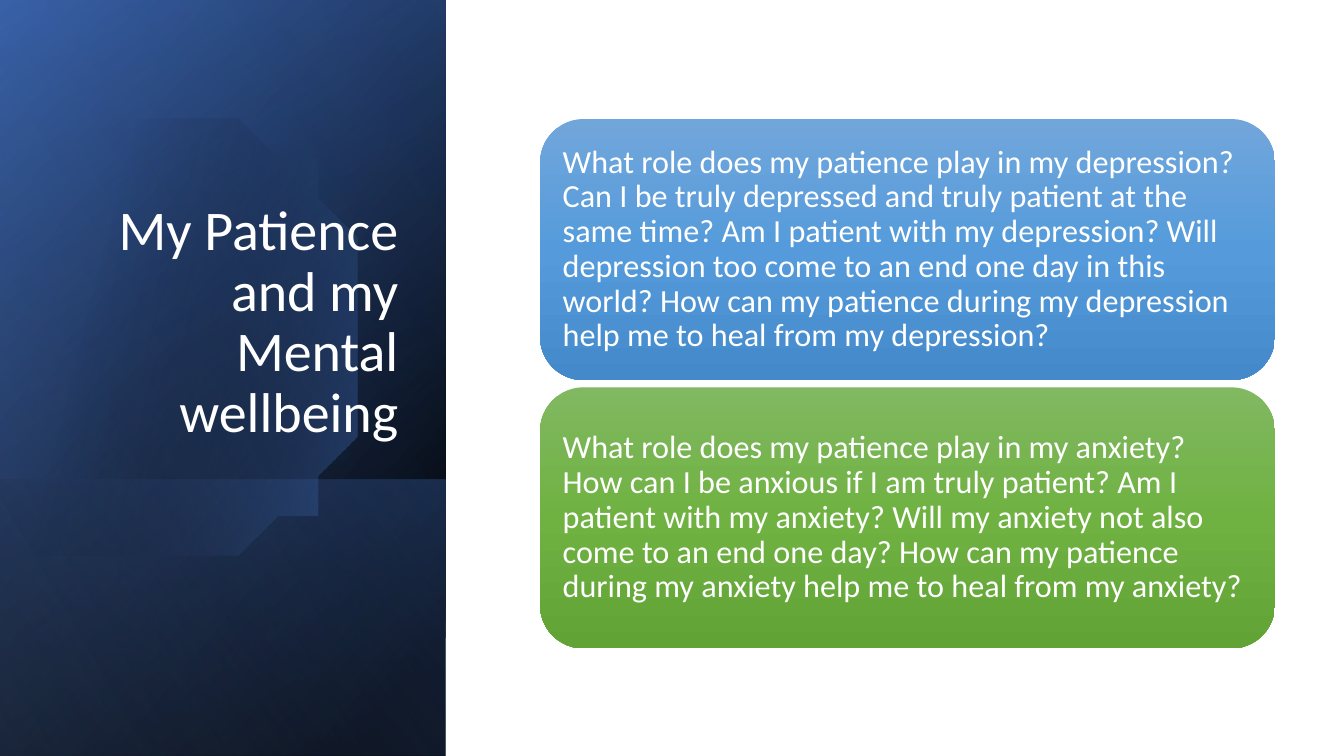
from lxml.etree import SubElement
from pptx import Presentation
from pptx.dml.color import RGBColor
from pptx.enum.shapes import MSO_SHAPE
from pptx.enum.text import MSO_ANCHOR, MSO_AUTO_SIZE, PP_ALIGN
from pptx.oxml.ns import qn
from pptx.util import Cm, Pt

COLORS = {
    "white": "FFFFFF",
    "black": "000000",
    "navy": "2F5597",
    "blue": "4472C4",
    "pale": "8FAADC",
    "sky_top": "71A6DB",
    "sky_middle": "559BDB",
    "sky_bottom": "448ACA",
    "green_top": "81B861",
    "green_middle": "6FB242",
    "green_bottom": "62A336",
}
TITLE = "My Patience and my Mental wellbeing"
CARDS = [
    ("sky", "What role does my patience play in my depression? Can I be truly depressed "
            "and truly patient at the same time? Am I patient with my depression? Will "
            "depression too come to an end one day in this world? How can my patience "
            "during my depression help me to heal from my depression?"),
    ("green", "What role does my patience play in my anxiety? How can I be anxious if I am "
              "truly patient? Am I patient with my anxiety? Will my anxiety not also come "
              "to an end one day? How can my patience during my anxiety help me to heal "
              "from my anxiety?"),
]
FULL_LAYERS = [
    (50, [(8, "black", 100), (100, "navy", 100)]),
    (30, [(0, "black", 0), (99, "blue", 46)]),
]
FOOT_LAYER = (130, [(2, "blue", 29), (100, "black", 30)])
DISC_LAYER = (13.9, [(29, "black", 0), (100, "blue", 43)])
SHEEN_LAYER = (120, [(0, "black", 0), (99, "pale", 11)])
DISC_START = (3.78, 2.79)
DISC_CURVES = [
    [(6.25, 2.84), (8.51, 4.5), (9.22, 6.99)],
    [(10.11, 10.08), (8.33, 13.28), (5.26, 14.17)],
    [(3.33, 14.73), (1.35, 14.25), (-0.08, 13.06)],
    [(-0.38, 12.78)],
    [(-0.38, 4.45)],
    [(0, 4.09)],
    [(0.58, 3.61), (1.27, 3.25), (2.03, 3.02)],
    [(2.62, 2.87), (3.2, 2.79), (3.78, 2.79)],
]
TITLE_FORMAT = {"size": Pt(40), "name": "Calibri", "bold": False}
CARD_FORMAT = {"size": Pt(23), "name": "Calibri"}


def paint_gradient(shape, angle, stops):
    shape.shadow.inherit = False
    shape.line.fill.background()
    shape.fill.gradient()
    gradient = shape._element.spPr.find(qn("a:gradFill"))
    for child in list(gradient):
        gradient.remove(child)
    gradient.set("rotWithShape", "1")
    stop_list = SubElement(gradient, qn("a:gsLst"))
    for position, color, opacity in stops:
        stop = SubElement(stop_list, qn("a:gs"), pos=str(position * 1000))
        value = SubElement(stop, qn("a:srgbClr"), val=COLORS[color])
        if opacity < 100:
            SubElement(value, qn("a:alpha"), val=str(opacity * 1000))
    SubElement(gradient, qn("a:lin"), ang=str(round(angle * 60000)), scaled="0")


def format_text(frame, text, alignment, anchor, font_format):
    frame.text = text
    frame.word_wrap = True
    frame.auto_size = MSO_AUTO_SIZE.NONE
    frame.vertical_anchor = anchor
    paragraph = frame.paragraphs[0]
    paragraph.alignment = alignment
    paragraph.line_spacing = 0.9
    font = paragraph.runs[0].font
    for name, value in font_format.items():
        setattr(font, name, value)
    font.color.rgb = RGBColor.from_string(COLORS["white"])


def add_turned_layer(slide, left, top, width, height, layer):
    shape = slide.shapes.add_shape(
        MSO_SHAPE.RECTANGLE,
        Cm(left + (width - height) / 2), Cm(top + (height - width) / 2),
        Cm(height), Cm(width))
    shape.rotation = 90
    shape._element.spPr.find(qn("a:xfrm")).set("flipH", "1")
    paint_gradient(shape, *layer)


def curve_points(start, controls, steps=16):
    if len(controls) == 1:
        return controls
    corners = [start, *controls]
    weights = (1, 3, 3, 1)
    return [
        tuple(sum(weight * (1 - step / steps) ** (3 - power) * (step / steps) ** power
                  * corner[axis]
                  for power, (weight, corner) in enumerate(zip(weights, corners)))
              for axis in (0, 1))
        for step in range(1, steps + 1)
    ]


def add_disc(slide, left, top):
    points = [DISC_START]
    for controls in DISC_CURVES:
        points.extend(curve_points(points[-1], controls))
    points = [(left + x, top + y) for x, y in points]
    builder = slide.shapes.build_freeform(*points[0], scale=Cm(1))
    builder.add_line_segments(points[1:], close=True)
    paint_gradient(builder.convert_to_shape(), *DISC_LAYER)


def add_title_panel(slide, left, top, width, height):
    foot = 6.96
    for layer in FULL_LAYERS:
        add_turned_layer(slide, left, top, width, height, layer)
    add_turned_layer(slide, left, top + height - foot, width, foot, FOOT_LAYER)
    add_disc(slide, left, top)
    add_turned_layer(slide, left, top, width, height, SHEEN_LAYER)
    title = slide.shapes.title
    title.left, title.top = Cm(left + 1.63), Cm(top + 4.67)
    title.width, title.height = Cm(8.66), Cm(6.65)
    format_text(title.text_frame, TITLE, PP_ALIGN.RIGHT, MSO_ANCHOR.BOTTOM, TITLE_FORMAT)
    slide.shapes._spTree.append(title._element)


def add_cards(slide, left, top, width, height, gap=0.18):
    card_height = (height - gap * (len(CARDS) - 1)) / len(CARDS)
    for index, (hue, text) in enumerate(CARDS):
        card = slide.shapes.add_shape(
            MSO_SHAPE.ROUNDED_RECTANGLE,
            Cm(left), Cm(top + index * (card_height + gap)), Cm(width), Cm(card_height))
        paint_gradient(card, 90, [(0, f"{hue}_top", 100), (50, f"{hue}_middle", 100),
                                  (100, f"{hue}_bottom", 100)])
        frame = card.text_frame
        for side in ("left", "top", "right", "bottom"):
            setattr(frame, f"margin_{side}", Cm(0.25))
        format_text(frame, text, PP_ALIGN.LEFT, MSO_ANCHOR.MIDDLE, CARD_FORMAT)


def main():
    presentation = Presentation()
    presentation.slide_width, presentation.slide_height = Cm(33.87), Cm(19.05)
    slide = presentation.slides.add_slide(presentation.slide_layouts[5])
    add_title_panel(slide, 0, 0, 11.23, 19.05)
    add_cards(slide, 13.61, 3, 18.52, 13.34)
    presentation.save("out.pptx")


if __name__ == "__main__":
    main()
